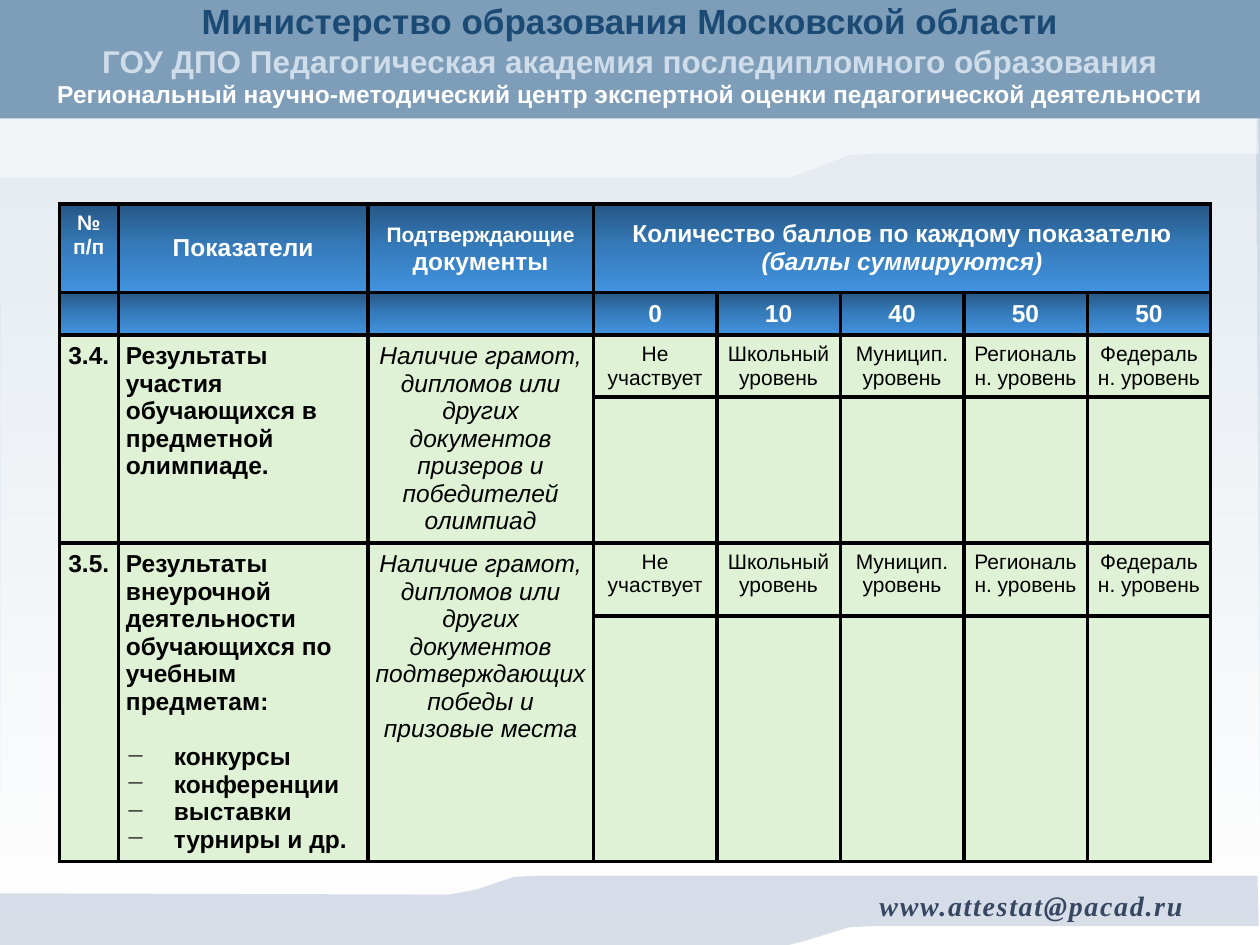
from copy import deepcopy

from lxml.etree import SubElement
from pptx import Presentation
from pptx.dml.color import RGBColor
from pptx.enum.text import MSO_ANCHOR as Anchor, MSO_AUTO_SIZE as AutoSize, PP_ALIGN as Align
from pptx.enum.shapes import MSO_SHAPE as Preset
from pptx.oxml.ns import qn
from pptx.util import Inches, Pt

COLORS = {
    "sky": "C1D0DD", "white": "FFFFFF", "band": "7E9DB8", "footer": "B0BED3",
    "ministry": "1B4A75", "academy": "CFDCEA", "address": "374762",
    "head_top": "265784", "head_middle": "367CBC", "head_bottom": "4193DF",
    "body": "E0F2D5", "black": "000000",
}
HEAD_STOPS = ["head_top", "head_middle", "head_bottom"]
COLUMNS = [0.47, 1.98, 1.79] + [0.98] * 5
ROWS = [0.7, 0.31, 0.46, 0.95, 0.58, 1.79]
SCORES = ["0", "10", "40", "50", "50"]
LEVELS = ["Не участвует", "Школьный уровень", "Муницип. уровень",
          "Региональн. уровень", "Федеральн. уровень"]
INDICATORS = [
    (2, "3.4.", "Результаты участия обучающихся в предметной олимпиаде.", [],
     "Наличие грамот, дипломов или других документов призеров и победителей олимпиад"),
    (4, "3.5.", "Результаты внеурочной деятельности обучающихся по учебным предметам:",
     ["конкурсы", "конференции", "выставки", "турниры и др."],
     "Наличие грамот, дипломов или других документов подтверждающих победы и призовые места"),
]
PANEL = [(0.01, 7.02), (10, 7.03), (9.97, 0.94), (0, 0.94)]
TOP_WAVE = [(9.98, 0.72), (4.26, 0.72), (4.08, 0.73), (3.78, 0.85), (3.56, 0.9),
            (0, 0.89), (0, 1.41), (6.26, 1.41), (6.38, 1.37), (6.74, 1.23),
            (6.92, 1.22), (9.99, 1.22)]
BOTTOM_WAVE = [(9.98, 6.95), (4.26, 6.95), (4.08, 6.96), (3.78, 7.06), (3.56, 7.1),
               (0, 7.09), (0, 7.5), (6.26, 7.5), (6.38, 7.47), (6.74, 7.36),
               (6.92, 7.35), (9.99, 7.35)]


def rgb(name):
    return RGBColor.from_string(COLORS[name])


def add_text(paragraph, text, size=14, color="black", bold=False, italic=False,
             font="Arial", align=Align.CENTER, spacing=None):
    paragraph.alignment = align
    run = paragraph.add_run()
    run.text = text
    run.font.name = font
    run.font.size = Pt(size)
    run.font.bold = bold
    run.font.italic = italic
    run.font.color.rgb = rgb(color)
    if spacing:
        run.font._element.set("spc", str(spacing * 100))


def fill_gradient(fill, owner, names):
    fill.gradient()
    fill.gradient_angle = 270
    stop_list = next(owner.iter(qn("a:gsLst")))
    for _ in names[2:]:
        stop_list.insert(1, deepcopy(stop_list[0]))
    for index, (stop, name) in enumerate(zip(fill.gradient_stops, names)):
        stop.color.rgb = rgb(name)
        stop.position = index / (len(names) - 1)


def finish_shape(shape, color):
    shape.fill.solid()
    shape.fill.fore_color.rgb = rgb(color)
    shape.line.fill.background()
    shape.shadow.inherit = False


def add_wave(slide, points, color):
    start, *rest = [(Inches(x), Inches(y)) for x, y in points]
    builder = slide.shapes.build_freeform(*start)
    builder.add_line_segments(rest, close=True)
    shape = builder.convert_to_shape()
    finish_shape(shape, color)
    color_element = next(shape.element.spPr.iter(qn("a:srgbClr")))
    SubElement(color_element, qn("a:alpha"), val="50000")
    return shape


def add_header(slide):
    band = slide.shapes.add_shape(Preset.RECTANGLE, 0, 0, Inches(10), Inches(0.94))
    finish_shape(band, "band")
    title = slide.shapes.title
    slide.shapes.element.append(title.element)
    title.left, title.top, title.width, title.height = 0, 0, Inches(10), Inches(0.86)
    frame = title.text_frame
    frame.auto_size = AutoSize.NONE
    frame.vertical_anchor = Anchor.MIDDLE
    first = frame.paragraphs[0]
    add_text(first, "Министерство образования Московской области", 20, "ministry", True)
    first.add_line_break()
    add_text(first, "ГОУ ДПО Педагогическая академия последипломного образования",
             18, "academy", True)
    add_text(frame.add_paragraph(), "Региональный научно-методический центр "
             "экспертной оценки педагогической деятельности", 14, "white", True)


def add_footer(slide):
    frame = add_wave(slide, BOTTOM_WAVE, "footer").text_frame
    frame.word_wrap = True
    frame.vertical_anchor = Anchor.TOP
    frame.margin_top = Inches(0.1)
    frame.margin_right = Inches(0.6)
    add_text(frame.paragraphs[0], "www.attestat@pacad.ru", 16, "address", True, True,
             "Times New Roman", Align.RIGHT, 1)


def format_cell(cell, is_head):
    cell.margin_left = cell.margin_right = Inches(0.06)
    cell.margin_top = cell.margin_bottom = Inches(0.06)
    properties = cell._tc.get_or_add_tcPr()
    for side in ("lnL", "lnR", "lnT", "lnB"):
        border = SubElement(properties, qn(f"a:{side}"), w=str(Pt(2.25)))
        solid = SubElement(border, qn("a:solidFill"))
        SubElement(solid, qn("a:srgbClr"), val=COLORS["black"])
    if is_head:
        fill_gradient(cell.fill, cell._tc, HEAD_STOPS)
    else:
        cell.fill.solid()
        cell.fill.fore_color.rgb = rgb("body")


def add_bullet(frame, text, is_first):
    paragraph = frame.add_paragraph()
    if is_first:
        paragraph.space_before = Pt(16)
    add_text(paragraph, text, bold=True, align=Align.LEFT)
    properties = paragraph._p.get_or_add_pPr()
    properties.set("marL", str(Inches(0.38)))
    properties.set("indent", str(Inches(-0.38)))
    SubElement(properties, qn("a:buChar"), char="−")


def fill_head(table):
    def head_text(paragraph, text, size=14, italic=False):
        add_text(paragraph, text, size, "white", True, italic)

    number, indicator, documents, points = [table.cell(0, column) for column in range(4)]
    points.merge(table.cell(0, 7))
    for cell in (indicator, documents, points):
        cell.vertical_anchor = Anchor.MIDDLE
    head_text(number.text_frame.paragraphs[0], "№ п/п", 12)
    head_text(indicator.text_frame.paragraphs[0], "Показатели")
    head_text(documents.text_frame.paragraphs[0], "Подтверждающие", 12)
    head_text(documents.text_frame.paragraphs[0], " документы")
    head_text(points.text_frame.paragraphs[0], "Количество баллов по каждому показателю")
    head_text(points.text_frame.add_paragraph(), "(баллы суммируются)", italic=True)
    for column, score in enumerate(SCORES, 3):
        head_text(table.cell(1, column).text_frame.paragraphs[0], score)


def fill_indicator(table, row, number, indicator, bullets, documents):
    for column in range(3):
        table.cell(row, column).merge(table.cell(row + 1, column))
    frames = [table.cell(row, column).text_frame for column in range(8)]
    add_text(frames[0].paragraphs[0], number, bold=True)
    add_text(frames[1].paragraphs[0], indicator, bold=True, align=Align.LEFT)
    for index, bullet in enumerate(bullets):
        add_bullet(frames[1], bullet, index == 0)
    add_text(frames[2].paragraphs[0], documents, italic=True)
    for frame, level in zip(frames[3:], LEVELS):
        add_text(frame.paragraphs[0], level, 12)


def add_score_table(slide):
    table = slide.shapes.add_table(len(ROWS), len(COLUMNS), Inches(0.47), Inches(1.62),
                                   Inches(sum(COLUMNS)), Inches(sum(ROWS))).table
    table.first_row = table.horz_banding = False
    for column, width in zip(table.columns, COLUMNS):
        column.width = Inches(width)
    for index, (row, height) in enumerate(zip(table.rows, ROWS)):
        row.height = Inches(height)
        for cell in row.cells:
            format_cell(cell, index < 2)
    fill_head(table)
    for indicator in INDICATORS:
        fill_indicator(table, *indicator)
    for cell in table.iter_cells():
        if not cell.text_frame.text:
            SubElement(cell.text_frame.paragraphs[0]._p, qn("a:endParaRPr"), sz="1200")


def main():
    presentation = Presentation()
    presentation.slide_width = Inches(10)
    presentation.slide_height = Inches(7.5)
    slide = presentation.slides.add_slide(presentation.slide_layouts[5])
    fill_gradient(slide.background.fill, slide.element, ["sky", "white"])
    add_wave(slide, PANEL, "white")
    add_wave(slide, TOP_WAVE, "white")
    add_header(slide)
    add_footer(slide)
    add_score_table(slide)
    presentation.save("out.pptx")


if __name__ == "__main__":
    main()
